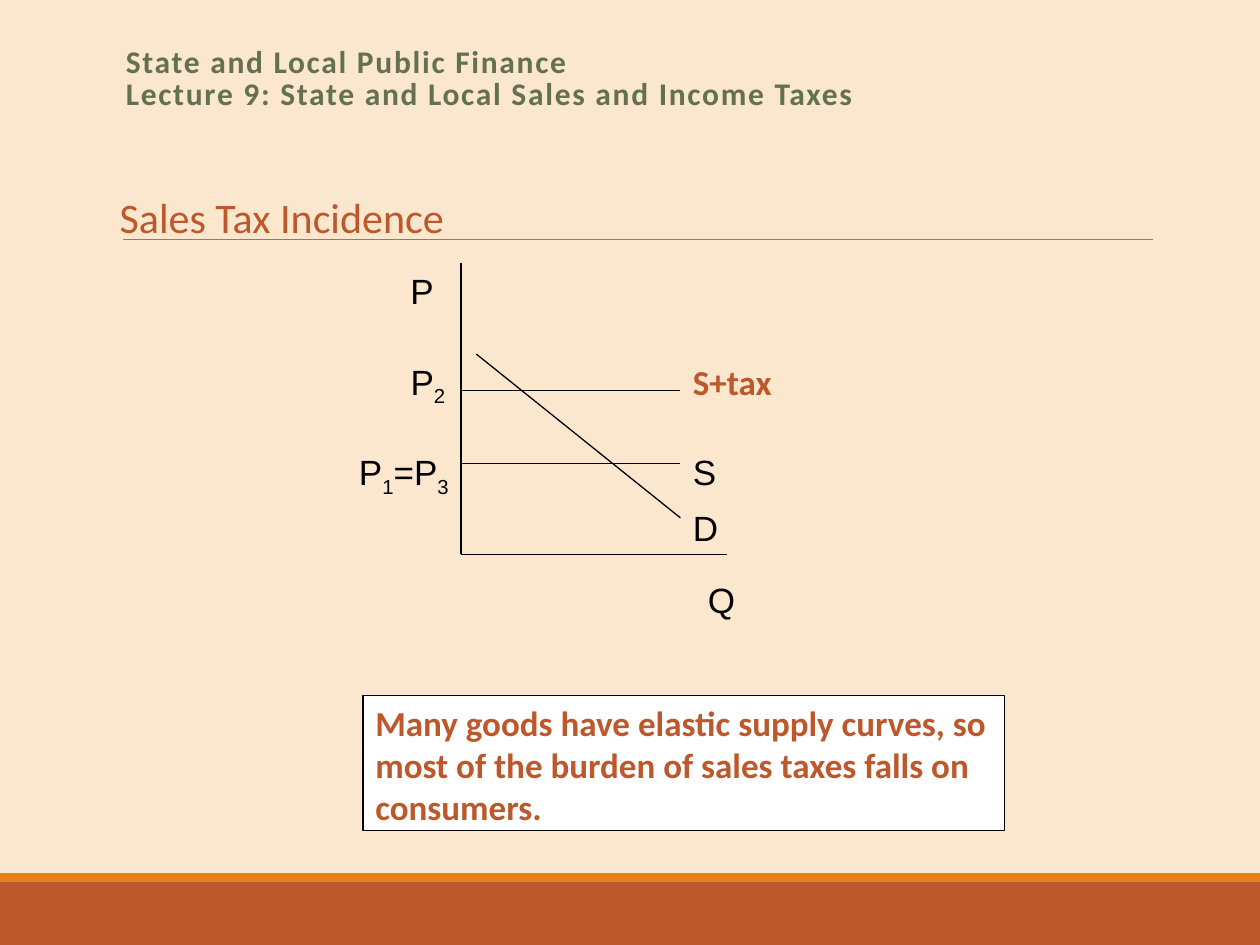
from dataclasses import dataclass

from lxml.etree import SubElement
from pptx import Presentation
from pptx.dml.color import RGBColor
from pptx.enum.shapes import MSO_CONNECTOR, MSO_SHAPE
from pptx.enum.text import MSO_ANCHOR, PP_ALIGN
from pptx.oxml.ns import qn
from pptx.util import Inches, Pt


@dataclass(frozen=True)
class Theme:
    background: str = "FBE6CE"
    rust: str = "BD582C"
    orange: str = "E48312"
    green: str = "637052"
    gray: str = "808080"
    black: str = "000000"
    white: str = "FFFFFF"
    text_font: str = "Calibri"
    graph_font: str = "Arial"
    heading_size: int = 24
    body_size: int = 20
    header_size: int = 18
    thin: float = 0.5
    normal: float = 0.75


class SlideBuilder:
    def __init__(self, slide, theme):
        self.slide = slide
        self.theme = theme
        fill = slide.background.fill
        fill.solid()
        fill.fore_color.rgb = RGBColor.from_string(theme.background)

    def line(self, start, end, color=None, width=None):
        connector = self.slide.shapes.add_connector(
            MSO_CONNECTOR.STRAIGHT, *map(Inches, start + end))
        connector.line.color.rgb = RGBColor.from_string(color or self.theme.black)
        connector.line.width = Pt(width or self.theme.normal)
        SubElement(connector._element.spPr, qn("a:effectLst"))

    def box(self, left, top, width, height, fill, outline=None):
        shape = self.slide.shapes.add_shape(
            MSO_SHAPE.RECTANGLE, *map(Inches, (left, top, width, height)))
        shape.shadow.inherit = False
        shape.fill.solid()
        shape.fill.fore_color.rgb = RGBColor.from_string(fill)
        if outline:
            shape.line.color.rgb = RGBColor.from_string(outline)
            shape.line.width = Pt(self.theme.normal)
        else:
            shape.line.fill.background()
        return shape

    def text(self, left, top, width, height, content, **style):
        textbox = self.slide.shapes.add_textbox(
            *map(Inches, (left, top, width, height)))
        return self.set_text(textbox, content, **style)

    def set_text(self, shape, content, size=None, color=None, font=None, bold=False):
        """Fill a shape with one paragraph; digits after "_" become subscripts."""
        frame = shape.text_frame
        frame.word_wrap = True
        frame.vertical_anchor = MSO_ANCHOR.TOP
        paragraph = frame.paragraphs[0]
        paragraph.alignment = PP_ALIGN.LEFT
        first, *others = content.split("_")
        paragraph.text = first
        for part in others:
            subscript = paragraph.add_run()
            subscript.text = part[0]
            subscript._r.get_or_add_rPr().set("baseline", "-25000")
            if part[1:]:
                paragraph.add_run().text = part[1:]
        for run in paragraph.runs:
            run.font.size = Pt(size or self.theme.body_size)
            run.font.name = font or self.theme.text_font
            run.font.bold = bold
            run.font.color.rgb = RGBColor.from_string(color or self.theme.rust)
        return frame


def main():
    theme = Theme()
    presentation = Presentation()
    presentation.slide_width = Inches(10)
    presentation.slide_height = Inches(7.5)
    slide = presentation.slides.add_slide(presentation.slide_layouts[6])
    builder = SlideBuilder(slide, theme)

    # Footer bands and heading rule
    builder.box(0, 7, 10, 0.5, theme.rust)
    builder.box(0, 6.93, 10, 0.07, theme.orange)
    builder.line((0.98, 1.9), (9.15, 1.9), theme.gray, theme.thin)

    # Heading
    heading = builder.text(0.95, 1.52, 8.25, 0.43, "Sales Tax Incidence",
                           size=theme.heading_size)
    heading.margin_left = heading.margin_right = 0
    heading_line = heading.paragraphs[0]
    heading_line.line_spacing = 0.9
    heading_line.space_before, heading_line.space_after = Pt(6.8), Pt(1.1)
    properties = heading_line._p.get_or_add_pPr()
    properties.set("marL", str(Inches(0.06)))
    properties.set("indent", str(-Inches(0.06)))

    # Axes, supply with and without tax, demand
    axis_x, axis_y, curve_end = 3.66, 4.4, 5.4
    supply_y, taxed_supply_y = 3.68, 3.1
    builder.line((axis_x, 2.09), (axis_x, axis_y))
    builder.line((axis_x, axis_y), (5.77, axis_y))
    for price_y in (supply_y, taxed_supply_y):
        builder.line((axis_x, price_y), (curve_end, price_y))
    builder.line((3.78, 2.81), (curve_end, 4.11))

    # Axis, price and curve labels
    for label, left, top, width, height in (
        ("P", 3.16, 2.09, 0.37, 0.58),
        ("Q", 5.52, 4.54, 0.37, 0.58),
        ("S", curve_end, 3.53, 0.62, 0.43),
        ("D", curve_end, 3.97, 0.62, 0.43),
        ("P_1=P_3", 2.75, 3.53, 0.99, 0.43),
        ("P_2", 3.16, 2.81, 0.99, 0.43),
    ):
        builder.text(left, top, width, height, label,
                     color=theme.black, font=theme.graph_font)
    builder.text(curve_end, 2.81, 1.19, 0.43, "S+tax", bold=True)

    # Conclusion
    conclusion = builder.box(2.88, 5.52, 5.09, 1.07, theme.white, theme.black)
    builder.set_text(conclusion,
                     "Many goods have elastic supply curves, so most of the "
                     "burden of sales taxes falls on consumers.", bold=True)

    # Lecture header
    header = builder.text(
        0.9, 0.33, 8.25, 0.65,
        "State and Local Public Finance\v"
        "Lecture 9: State and Local Sales and Income Taxes",
        size=theme.header_size, color=theme.green, bold=True)
    header.paragraphs[0].line_spacing = 0.85
    for run in header.paragraphs[0].runs:
        run._r.get_or_add_rPr().set("spc", "100")

    presentation.save("out.pptx")


if __name__ == "__main__":
    main()
